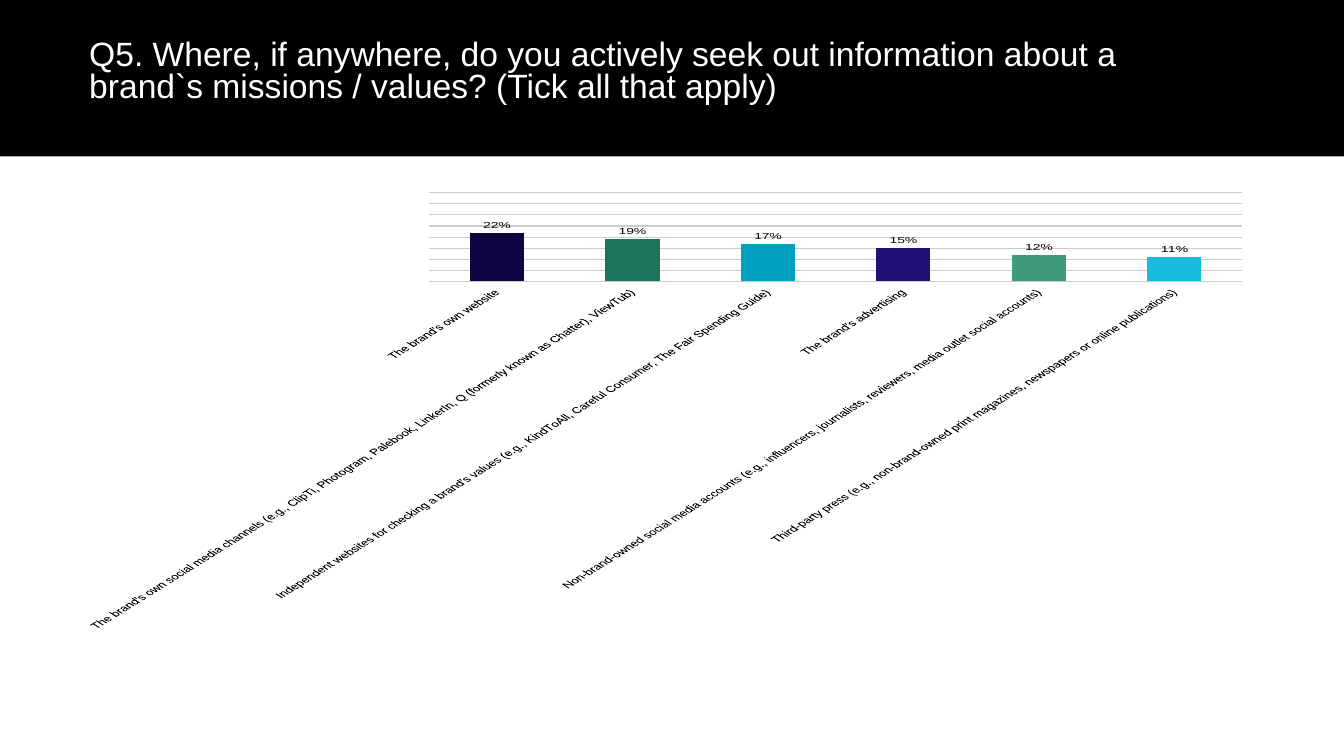
from dataclasses import dataclass

from pptx import Presentation
from pptx.chart.data import CategoryChartData
from pptx.dml.color import RGBColor
from pptx.enum import chart as ch, shapes, text
from pptx.util import Cm, Pt


@dataclass(frozen=True)
class Theme:
    font: str = "Arial"
    base: str = "Calibri"
    black: str = "000000"
    white: str = "FFFFFF"
    grid: str = "CCCCCC"
    bars: tuple = ("0F0542", "1B755A", "00A0BE", "211176", "409A7C", "18BBDD")
    title: int = 24
    body: int = 12
    label: int = 10


THEME = Theme()

TITLE = (
    "Q5. Where, if anywhere, do you actively seek out information about a "
    "brand`s missions / values? (Tick all that apply)"
)
SHARES = {
    "The brand's own website": 0.22,
    "The brand's own social media channels (e.g., ClipTi, Photogram, "
    "Palebook, LinkerIn, Q (formerly known as Chatter), ViewTub)": 0.19,
    "Independent websites for checking a brand's values (e.g., KindToAll, "
    "Careful Consumer, The Fair Spending Guide)": 0.17,
    "The brand's advertising": 0.15,
    "Non-brand-owned social media accounts (e.g., influencers, journalists, "
    "reviewers, media outlet social accounts)": 0.12,
    "Third-party press (e.g., non-brand-owned print magazines, newspapers "
    "or online publications)": 0.11,
}


def style(font, size, color=THEME.black, name=THEME.font):
    font.name = name
    font.size = Pt(size)
    font.color.rgb = RGBColor.from_string(color)


def paint(fill, color):
    fill.solid()
    fill.fore_color.rgb = RGBColor.from_string(color)


def add_band(slide, box, color):
    band = slide.shapes.add_shape(shapes.MSO_SHAPE.RECTANGLE, *box)
    band.shadow.inherit = False
    paint(band.fill, color)
    band.line.fill.background()


def add_text(slide, box, words, *, size, color, leading=1.0):
    frame = slide.shapes.add_textbox(*box).text_frame
    frame.word_wrap = True
    frame.vertical_anchor = text.MSO_ANCHOR.TOP
    para = frame.paragraphs[0]
    para.line_spacing = leading
    run = para.add_run()
    run.text = words
    style(run.font, size, color)


def add_bars(slide, box, shares):
    data = CategoryChartData(number_format="0%")
    data.categories = list(shares)
    data.add_series("Series 1", list(shares.values()))
    kind = ch.XL_CHART_TYPE.COLUMN_CLUSTERED
    chart = slide.shapes.add_chart(kind, *box, data).chart
    chart.has_legend = False
    chart.has_title = False
    style(chart.font, THEME.body, name=THEME.base)

    # Axes and grid
    cat = chart.category_axis
    cat.major_tick_mark = ch.XL_TICK_MARK.NONE
    cat.tick_label_position = ch.XL_TICK_LABEL_POSITION.LOW
    cat.format.line.fill.background()
    style(cat.tick_labels.font, THEME.label)
    val = chart.value_axis
    val.visible = False
    val.minimum_scale, val.maximum_scale = 0, 0.4
    val.major_unit = 0.05
    val.has_major_gridlines = True
    line = val.major_gridlines.format.line
    line.width = Pt(0.75)
    line.color.rgb = RGBColor.from_string(THEME.grid)

    # Bars and their values
    plot = chart.plots[0]
    plot.gap_width = 150
    plot.vary_by_categories = False
    series = plot.series[0]
    for i, color in enumerate(THEME.bars):
        paint(series.points[i].format.fill, color)
    labels = series.data_labels
    labels.show_value = True
    labels.number_format = "0%"
    labels.number_format_is_linked = False
    labels.position = ch.XL_LABEL_POSITION.OUTSIDE_END
    style(labels.font, THEME.label)


def main():
    deck = Presentation()
    deck.slide_width, deck.slide_height = Cm(33.87), Cm(19.05)
    slide = deck.slides.add_slide(deck.slide_layouts[6])

    # Heading
    add_band(slide, (0, 0, deck.slide_width, Cm(3.94)), THEME.black)
    add_text(slide, (Cm(2), Cm(0.89), Cm(29.16), Cm(2.03)), TITLE,
             size=THEME.title, color=THEME.white, leading=0.8)

    # Survey answers
    add_bars(slide, (Cm(1.9), Cm(4.72), Cm(30.25), Cm(11.18)), SHARES)

    deck.save("out.pptx")


if __name__ == "__main__":
    main()
